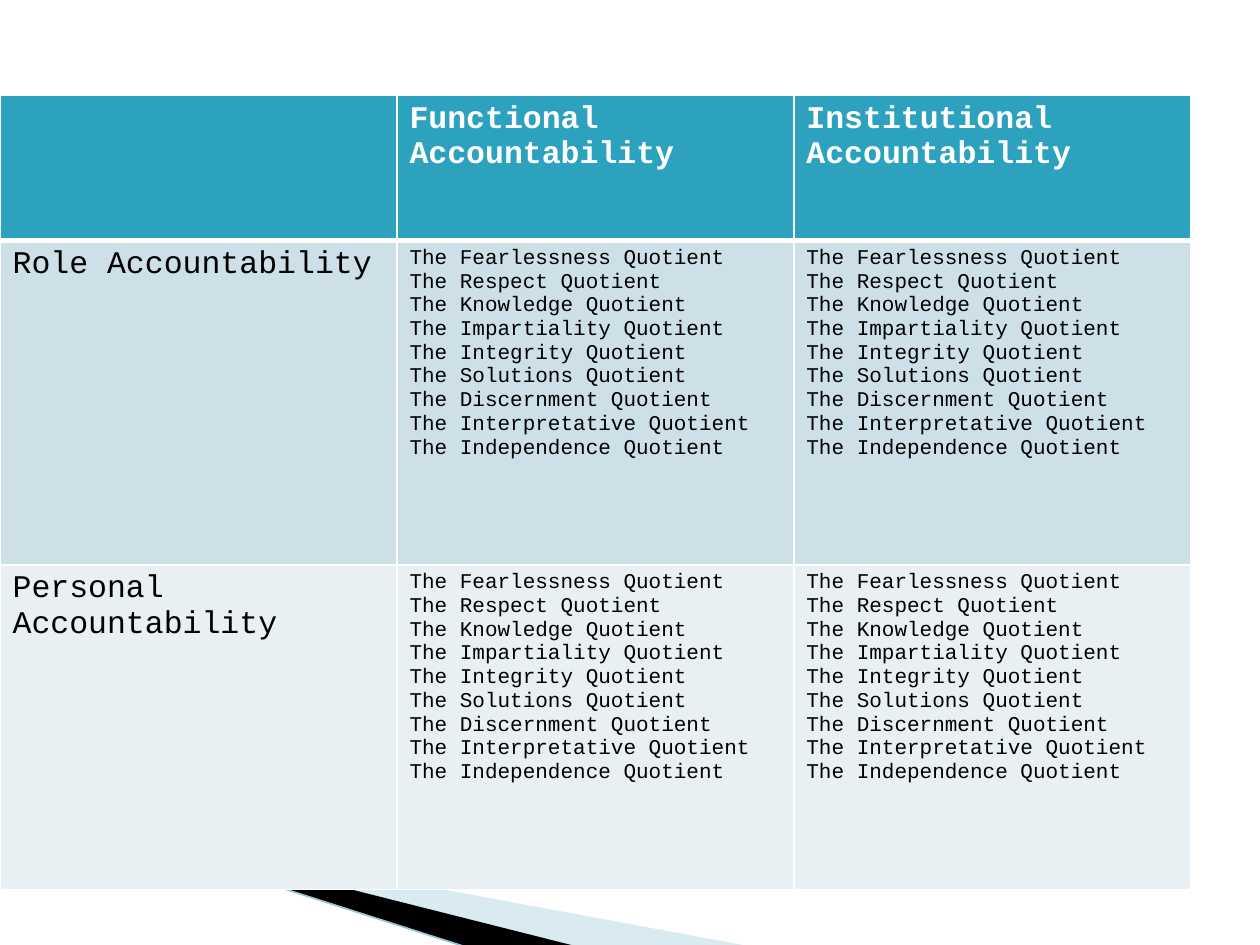
from lxml import etree
from pptx import Presentation
from pptx import util as u
from pptx.dml.color import RGBColor
from pptx.oxml import ns

WHITE = RGBColor(0xFF, 0xFF, 0xFF)
BLACK = RGBColor(0, 0, 0)
TEAL = RGBColor(0x2D, 0xA2, 0xBF)
MIST = RGBColor(0xCD, 0xE0, 0xE8)
PALE = RGBColor(0xE8, 0xF0, 0xF4)
SKY = RGBColor(0xA0, 0xCB, 0xDC)
EDGE = RGBColor(0x97, 0xC5, 0xD8)
FONT = "Courier New"

TRAITS = ["Fearlessness", "Respect", "Knowledge", "Impartiality", "Integrity",
          "Solutions", "Discernment", "Interpretative", "Independence"]
LIST = "\n".join(f"The {trait} Quotient" for trait in TRAITS)
ROWS = [
    ("", "Functional Accountability", "Institutional Accountability"),
    ("Role Accountability", LIST, LIST),
    ("Personal Accountability", LIST, LIST),
]
FILLS = [TEAL, MIST, PALE]
TALL = [82.8, 185.4, 185.4]
WIDE = 226.8


def add_wedge(slide, points, color, alpha=None):
    """Draw a filled corner wedge, with alpha in percent."""
    pts = [(u.Pt(x), u.Pt(y)) for x, y in points]
    pen = slide.shapes.build_freeform(*pts[0])
    pen.add_line_segments(pts[1:], close=True)
    wedge = pen.convert_to_shape()
    wedge.shadow.inherit = False
    wedge.line.fill.background()
    wedge.fill.solid()
    wedge.fill.fore_color.rgb = color
    if alpha:
        tint = wedge.fill._xPr.find(".//" + ns.qn("a:srgbClr"))
        etree.SubElement(tint, ns.qn("a:alpha"), val=str(alpha * 1000))


def add_line(slide, start, end):
    """Draw the thin edge line."""
    ends = [u.Pt(v) for v in (*start, *end)]
    line = slide.shapes.add_connector(1, *ends)
    line.line.color.rgb = EDGE
    line.line.width = u.Pt(0.95)
    etree.SubElement(line._element.spPr, ns.qn("a:effectLst"))


def set_edges(cell, widths):
    """Give a cell white borders, with widths in points by side."""
    props = cell._tc.get_or_add_tcPr()
    for side, width in widths.items():
        edge = etree.SubElement(props, ns.qn("a:ln" + side), w=str(u.Pt(width)))
        fill = etree.SubElement(edge, ns.qn("a:solidFill"))
        etree.SubElement(fill, ns.qn("a:srgbClr"), val=str(WHITE))


def set_cell(cell, words, row, col):
    """Fill and style one cell by its place in the table."""
    head = row == 0
    set_edges(cell, {"L": 1, "R": 1, "T": 3 if row == 1 else 1,
                     "B": 3 if head else 1})
    cell.fill.solid()
    cell.fill.fore_color.rgb = FILLS[row]
    cell.text_frame.text = words
    for para in cell.text_frame.paragraphs:
        font = para.font
        for run in para.runs:
            font = run.font
            font.name = FONT
            font.size = u.Pt(18 if head or col == 0 else 12)
            font.bold = head
            font.color.rgb = WHITE if head else BLACK


def add_grid(slide):
    """Add the accountability table."""
    frame = slide.shapes.add_table(3, 3, u.Pt(0), u.Pt(54.72),
                                   u.Pt(3 * WIDE), u.Pt(sum(TALL)))
    table = frame.table
    for col in table.columns:
        col.width = u.Pt(WIDE)
    for row, words in enumerate(ROWS):
        table.rows[row].height = u.Pt(TALL[row])
        for col, word in enumerate(words):
            set_cell(table.cell(row, col), word, row, col)


def main():
    """Build and save the slide."""
    deck = Presentation()
    deck.slide_width, deck.slide_height = u.Pt(720), u.Pt(540)
    slide = deck.slides.add_slide(deck.slide_layouts[6])
    add_wedge(slide, [(39.6, 468.7), (428.4, 540.7), (328.3, 540.7), (39.6, 468)],
              SKY, 40)
    add_wedge(slide, [(38.2, 467.3), (329, 540.7), (267.8, 541.4), (38.9, 468)],
              BLACK)
    add_line(slide, (-0.7, 455.8), (267.1, 541.4))
    add_grid(slide)
    deck.save("out.pptx")


if __name__ == "__main__":
    main()
